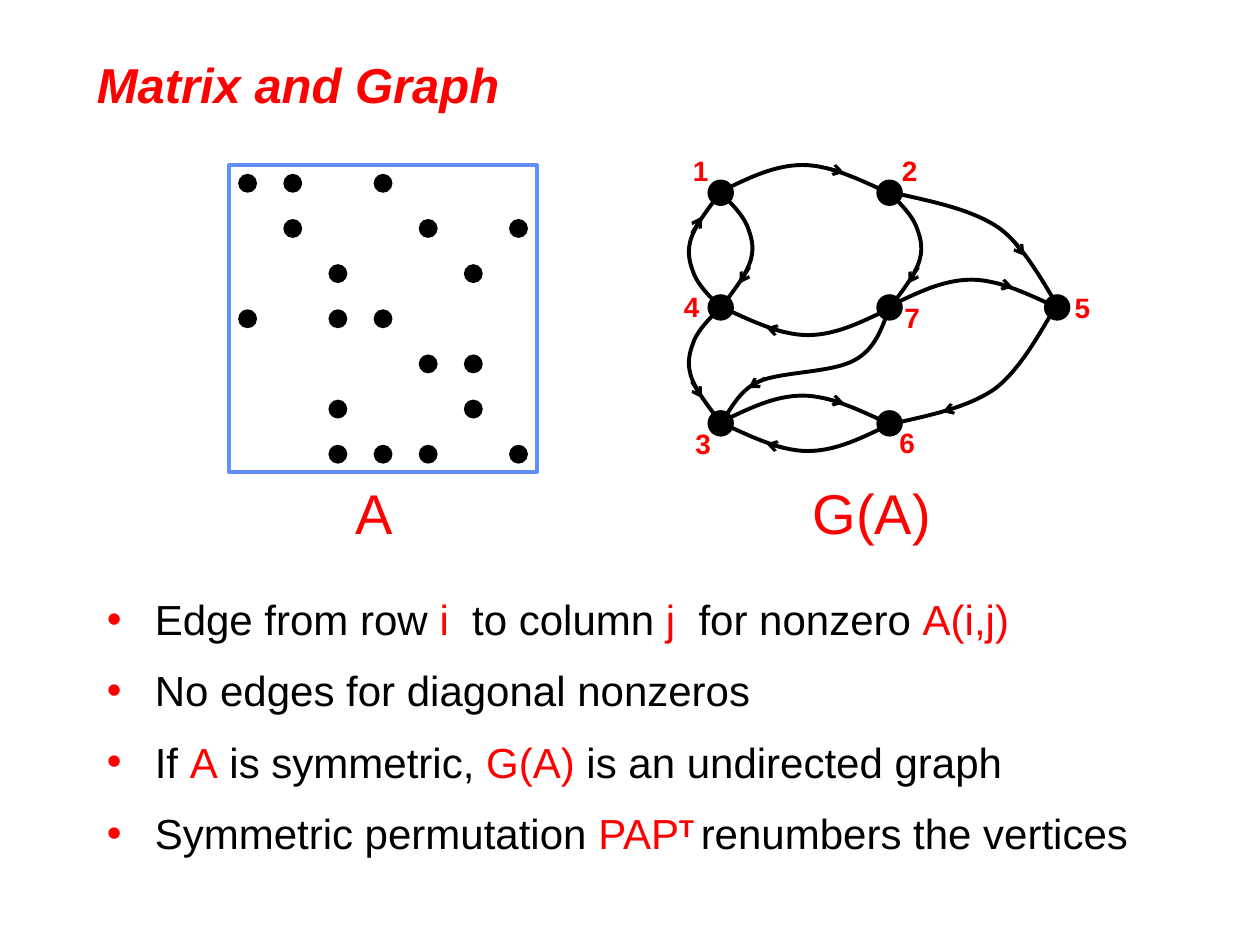
from lxml.etree import SubElement
from pptx import Presentation
from pptx.dml.color import RGBColor
from pptx.enum.shapes import MSO_CONNECTOR, MSO_SHAPE
from pptx.enum.text import MSO_ANCHOR
from pptx.oxml.ns import qn
from pptx.util import Inches, Pt

RED, BLACK, BLUE = "FF0000", "000000", "618FFD"

# Nonzero columns of each row, counted from 1
ROWS = [(1, 2, 4), (2, 5, 7), (3, 6), (1, 3, 4), (5, 6), (3, 6), (3, 4, 5, 7)]

# Vertex: centre, then top left of its label, within the graph's box
NODES = {
    1: (0.39, 0.36, 0.07, 0), 2: (1.73, 0.36, 1.73, 0),
    3: (0.39, 2.19, 0.09, 2.17), 4: (0.39, 1.27, 0, 1.08),
    5: (3.06, 1.27, 3.1, 1.09), 6: (1.73, 2.19, 1.71, 2.16),
    7: (1.73, 1.27, 1.75, 1.17),
}

# Curve: Bezier points, then the two ends of its arrow, from the first vertex
ARC = ([(0, -0.01), (0.21, -0.11), (0.42, -0.22), (0.65, -0.22),
        (0.87, -0.22), (1.11, -0.1), (1.35, 0.01)],
       [(0.83, -0.2), (0.98, -0.16)])
SIDE = ([(0.01, 0.01), (0.09, 0.09), (0.17, 0.17), (0.21, 0.26), (0.24, 0.34),
         (0.27, 0.42), (0.24, 0.53), (0.21, 0.64), (0.11, 0.77), (0.01, 0.9)],
        [(0.23, 0.59), (0.15, 0.72)])
WAVE = ([(0, 0), (-0.06, 0.16), (-0.11, 0.33), (-0.28, 0.42), (-0.46, 0.52),
         (-0.87, 0.51), (-1.04, 0.59), (-1.22, 0.67), (-1.28, 0.87), (-1.34, 0.9)],
        [(-0.99, 0.56), (-1.12, 0.64)])
FALL = ([(0.03, 0), (0.34, 0.07), (0.65, 0.13), (0.87, 0.28),
         (1.09, 0.44), (1.27, 0.81), (1.35, 0.92)],
        [(0.98, 0.38), (1.07, 0.5)])
BACK = ([(-0.02, 0.01), (-0.1, 0.13), (-0.28, 0.49), (-0.5, 0.65),
         (-0.72, 0.8), (-1.03, 0.86), (-1.34, 0.93)],
        [(-0.76, 0.78), (-0.91, 0.83)])

# Edge: first vertex, curve, flips in x and y
EDGES = [
    (1, ARC, 1, 1), (7, ARC, 1, 1), (3, ARC, 1, 1),
    (6, ARC, -1, -1), (7, ARC, -1, -1),
    (1, SIDE, 1, 1), (2, SIDE, 1, 1), (4, SIDE, -1, -1), (4, SIDE, -1, 1),
    (7, WAVE, 1, 1), (2, FALL, 1, 1), (5, BACK, 1, 1),
]

# Runs as (text, colour)
POINTS = [
    [("Edge from row ", BLACK), ("i ", RED), (" to column ", BLACK),
     ("j ", RED), (" for nonzero ", BLACK), ("A(i,j)", RED)],
    [("No edges for diagonal nonzeros", BLACK)],
    [("If ", BLACK), ("A", RED), (" is symmetric, ", BLACK),
     ("G(A) ", RED), ("is an undirected graph", BLACK)],
    [("Symmetric permutation ", BLACK), ("PAP", RED), ("T ", RED),
     ("renumbers the vertices", BLACK)],
]


def color(code):
    return RGBColor.from_string(code)


def add_text(shapes, text, x, y, w, h, size, bold=False, wrap=False):
    box = shapes.add_textbox(Inches(x), Inches(y), Inches(w), Inches(h))
    frame = box.text_frame
    frame.word_wrap = wrap
    para = frame.paragraphs[0]
    para.text = text
    font = para.font
    font.name, font.size, font.bold = "Arial", Pt(size), bold
    font.color.rgb = color(RED)
    return frame


def add_dot(shapes, x, y, size):
    dot = shapes.add_shape(MSO_SHAPE.OVAL, Inches(x), Inches(y), Inches(size), Inches(size))
    dot.shadow.inherit = False
    dot.fill.solid()
    dot.fill.fore_color.rgb = color(BLACK)
    dot.line.fill.background()


def add_curve(shapes, points):
    """Draw a chain of cubic Bezier curves through the points."""
    start, *rest = [(Inches(x), Inches(y)) for x, y in points]
    pen = shapes.build_freeform(*start)
    pen.add_line_segments(rest, close=False)
    curve = pen.convert_to_shape()
    steps = list(curve._element.iter(qn("a:lnTo")))
    for i in range(0, len(steps), 3):
        first, *others = steps[i:i + 3]
        bend = first.makeelement(qn("a:cubicBezTo"))
        first.addprevious(bend)
        for step in (first, *others):
            bend.append(step[0])
            step.getparent().remove(step)
    curve.shadow.inherit = False
    curve.fill.background()
    curve.line.color.rgb = color(BLACK)
    curve.line.width = Pt(2.25)


def add_arrow(shapes, start, end):
    ends = [Inches(v) for v in (*start, *end)]
    arrow = shapes.add_connector(MSO_CONNECTOR.STRAIGHT, *ends)
    arrow.line.color.rgb = color(BLACK)
    arrow.line.width = Pt(1.75)
    SubElement(arrow.line._get_or_add_ln(), qn("a:tailEnd"), type="arrow")
    SubElement(arrow._element.spPr, qn("a:effectLst"))


def add_matrix(slide, x, y, size):
    shapes = slide.shapes.add_group_shape().shapes
    frame = shapes.add_shape(MSO_SHAPE.RECTANGLE, Inches(x), Inches(y),
                             Inches(size), Inches(size))
    frame.shadow.inherit = False
    frame.fill.background()
    frame.line.color.rgb = color(BLUE)
    frame.line.width = Pt(2.25)
    dot, edge = 0.15, 0.07
    pitch = (size - 2 * edge - dot) / (len(ROWS) - 1)
    for row, cols in enumerate(ROWS):
        for col in cols:
            add_dot(shapes, x + edge + (col - 1) * pitch, y + edge + row * pitch, dot)


def add_graph(slide, x, y):
    shapes = slide.shapes.add_group_shape().shapes
    for node, (curve, arrow), flip_x, flip_y in EDGES:
        cx, cy = NODES[node][:2]

        def place(points):
            return [(x + cx + flip_x * dx, y + cy + flip_y * dy) for dx, dy in points]

        add_curve(shapes, place(curve))
        add_arrow(shapes, *place(arrow))
    dot = 0.21
    for node, (cx, cy, tx, ty) in NODES.items():
        add_dot(shapes, x + cx - dot / 2, y + cy - dot / 2, dot)
        add_text(shapes, str(node), x + tx, y + ty, 0.32, 0.37, 16, bold=True)


def add_bullet(para):
    props = para._p.get_or_add_pPr()
    props.set("marL", str(Inches(0.38)))
    props.set("indent", str(-Inches(0.38)))
    tint = SubElement(props, qn("a:buClr"))
    SubElement(tint, qn("a:srgbClr"), val=RED)
    SubElement(props, qn("a:buFont"), typeface="Arial")
    SubElement(props, qn("a:buChar"), char="•")


def add_points(slide, x, y, w, h):
    box = slide.shapes.add_textbox(Inches(x), Inches(y), Inches(w), Inches(h))
    frame = box.text_frame
    frame.word_wrap = True
    for i, runs in enumerate(POINTS):
        para = frame.add_paragraph() if i else frame.paragraphs[0]
        para.line_spacing = 1.2
        para.space_before = Pt(6.3)
        add_bullet(para)
        para.font.name, para.font.size = "Arial", Pt(24)
        for text, code in runs:
            run = para.add_run()
            run.text = text
            run.font.color.rgb = color(code)
            if text == "T ":
                run.font.bold = True
                run._r.get_or_add_rPr().set("baseline", "30000")


def main():
    deck = Presentation()
    deck.slide_width, deck.slide_height = Inches(10), Inches(7.5)
    slide = deck.slides.add_slide(deck.slide_layouts[6])
    title = add_text(slide.shapes, "Matrix and Graph", 0.67, 0.33, 8.19, 0.67,
                     28, bold=True, wrap=True)
    title.vertical_anchor = MSO_ANCHOR.MIDDLE
    title.paragraphs[0].font.italic = True
    add_points(slide, 0.75, 4.58, 8.75, 2.08)
    add_matrix(slide, 1.82, 1.31, 2.44)
    add_graph(slide, 5.33, 1.17)
    add_text(slide.shapes, "A", 2.72, 3.75, 0.5, 0.64, 32)
    add_text(slide.shapes, "G(A)", 6.35, 3.75, 1.27, 0.64, 32)
    deck.save("out.pptx")


if __name__ == "__main__":
    main()
